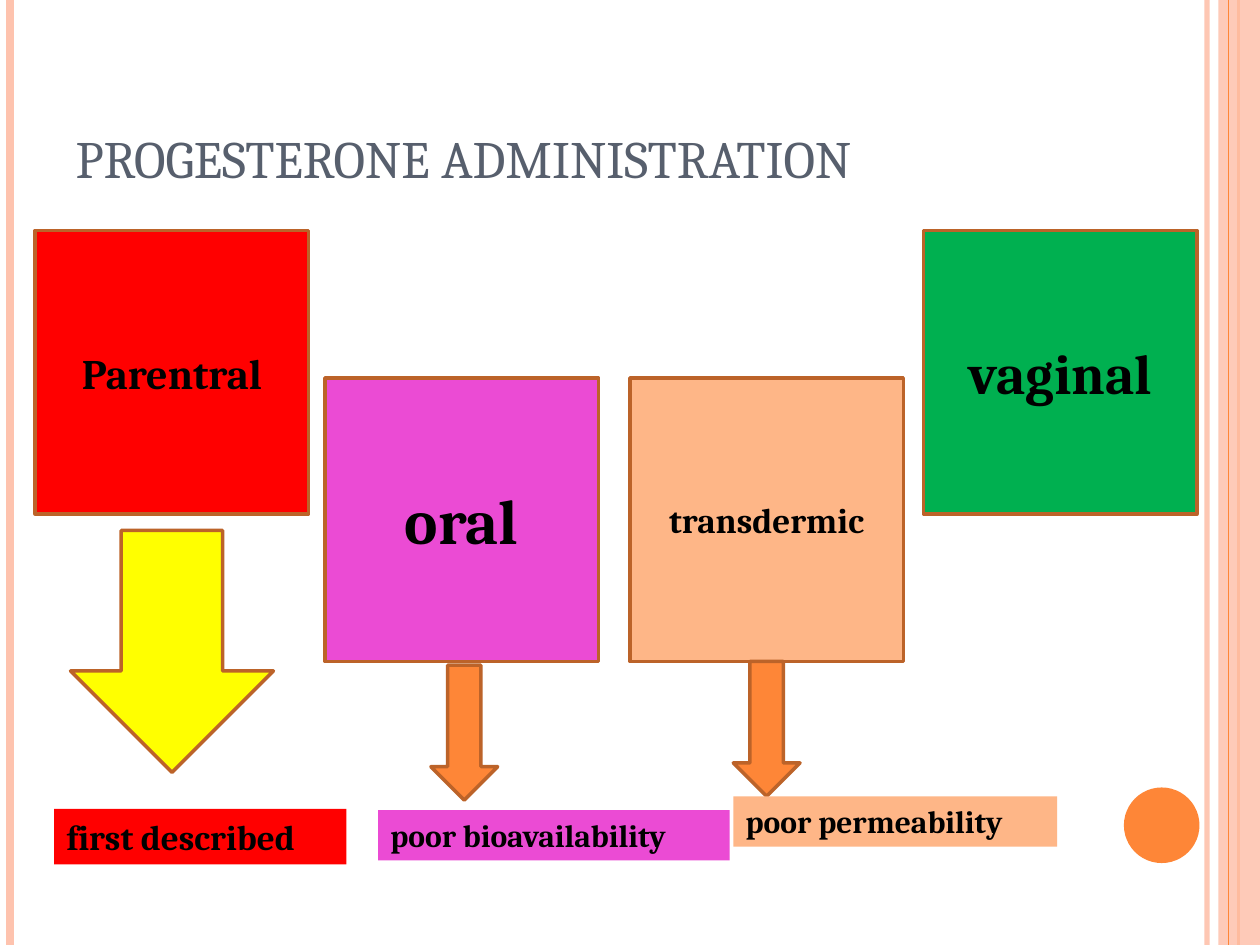
"""Build the slide on routes of progesterone administration."""
from lxml.etree import SubElement
from pptx import Presentation
from pptx.dml.color import RGBColor
from pptx.enum.shapes import MSO_CONNECTOR, MSO_SHAPE
from pptx.enum.text import MSO_ANCHOR, PP_ALIGN
from pptx.oxml.ns import qn
from pptx.util import Inches, Pt

BLACK = RGBColor(0x00, 0x00, 0x00)
SLATE = RGBColor(0x57, 0x5F, 0x6D)
PINK = RGBColor(0xFE, 0xC3, 0xAE)
ORANGE = RGBColor(0xFE, 0x86, 0x37)
BROWN = RGBColor(0xBC, 0x63, 0x29)
RED = RGBColor(0xFF, 0x00, 0x00)
MAGENTA = RGBColor(0xEB, 0x4B, 0xD4)
PEACH = RGBColor(0xFE, 0xB6, 0x87)
GREEN = RGBColor(0x00, 0xB0, 0x50)
YELLOW = RGBColor(0xFF, 0xFF, 0x00)

FONT = "Cambria"
WIDTH, HEIGHT = 10, 7.5
TITLE = "PROGESTERONE ADMINISTRATION"
BOX_W, BOX_H = 2.17, 2.25

OUTER_RULES = [(9.58, PINK, 3, 93), (0.08, PINK, 4.5, 100), (9.83, ORANGE, 1.5, 100)]
INNER_RULES = [(9.75, ORANGE, 0.75, 100)]
ROUTES = [
    ("Parentral", 0.28, 1.83, RED, 24),
    ("oral", 2.58, 3, MAGENTA, 36),
    ("transdermic", 5, 3, PEACH, 20),
    ("vaginal", 7.33, 1.83, GREEN, 32),
]
ARROWS = [
    (0.56, 4.21, 1.61, 1.92, YELLOW),
    (3.42, 5.28, 0.53, 1.07, ORANGE),
    (5.82, 5.25, 0.53, 1.07, ORANGE),
]
REMARKS = [
    ("first described", 0.43, 6.42, 2.32, 0.44, RED, 20),
    ("poor bioavailability", 3, 6.43, 2.79, 0.4, MAGENTA, 18),
    ("poor permeability", 5.82, 6.32, 2.57, 0.4, PEACH, 18),
]


def set_alpha(shape, percent):
    color = next(shape._element.spPr.iter(qn("a:srgbClr")))
    SubElement(color, qn("a:alpha")).set("val", str(percent * 1000))


def add_rules(s, rules):
    for x, color, width, alpha in rules:
        rule = s.shapes.add_connector(
            MSO_CONNECTOR.STRAIGHT, Inches(x), 0, Inches(x), Inches(HEIGHT))
        rule.line.color.rgb = color
        rule.line.width = Pt(width)
        if alpha < 100:
            set_alpha(rule, alpha)
        SubElement(rule._element.spPr, qn("a:effectLst"))


def add_block(s, kind, x, y, w, h, fill, outline=None):
    sp = s.shapes.add_shape(kind, Inches(x), Inches(y), Inches(w), Inches(h))
    sp.shadow.inherit = False
    sp.fill.solid()
    sp.fill.fore_color.rgb = fill
    if outline is None:
        sp.line.fill.background()
    else:
        sp.line.color.rgb = outline
        sp.line.width = Pt(2)
    return sp


def set_text(sp, text, size, color=BLACK, bold=True,
             align=PP_ALIGN.LEFT, anchor=MSO_ANCHOR.TOP):
    tf = sp.text_frame
    tf.text = text
    tf.word_wrap = True
    tf.vertical_anchor = anchor
    p = tf.paragraphs[0]
    p.alignment = align
    font = p.runs[0].font
    font.name, font.size, font.bold = FONT, Pt(size), bold
    font.color.rgb = color


def main():
    prs = Presentation()
    prs.slide_width, prs.slide_height = Inches(WIDTH), Inches(HEIGHT)
    s = prs.slides.add_slide(prs.slide_layouts[5])

    add_rules(s, OUTER_RULES)
    band = add_block(s, MSO_SHAPE.RECTANGLE, 9.67, 0, 0.33, HEIGHT, PINK)
    set_alpha(band, 87)
    add_rules(s, INNER_RULES)
    add_block(s, MSO_SHAPE.OVAL, 8.92, 6.25, 0.6, 0.6, ORANGE)

    title = s.shapes.title
    title.left, title.top = Inches(0.5), Inches(0.3)
    title.width, title.height = Inches(8.17), Inches(1.25)
    set_text(title, TITLE, 30, SLATE, bold=False, anchor=MSO_ANCHOR.BOTTOM)

    for text, x, y, fill, size in ROUTES:
        box = add_block(s, MSO_SHAPE.RECTANGLE, x, y, BOX_W, BOX_H, fill, BROWN)
        set_text(box, text, size, align=PP_ALIGN.CENTER, anchor=MSO_ANCHOR.MIDDLE)
    for x, y, w, h, fill in ARROWS:
        add_block(s, MSO_SHAPE.DOWN_ARROW, x, y, w, h, fill, BROWN)
    for text, x, y, w, h, fill, size in REMARKS:
        set_text(add_block(s, MSO_SHAPE.RECTANGLE, x, y, w, h, fill), text, size)

    prs.save("out.pptx")


if __name__ == "__main__":
    main()
